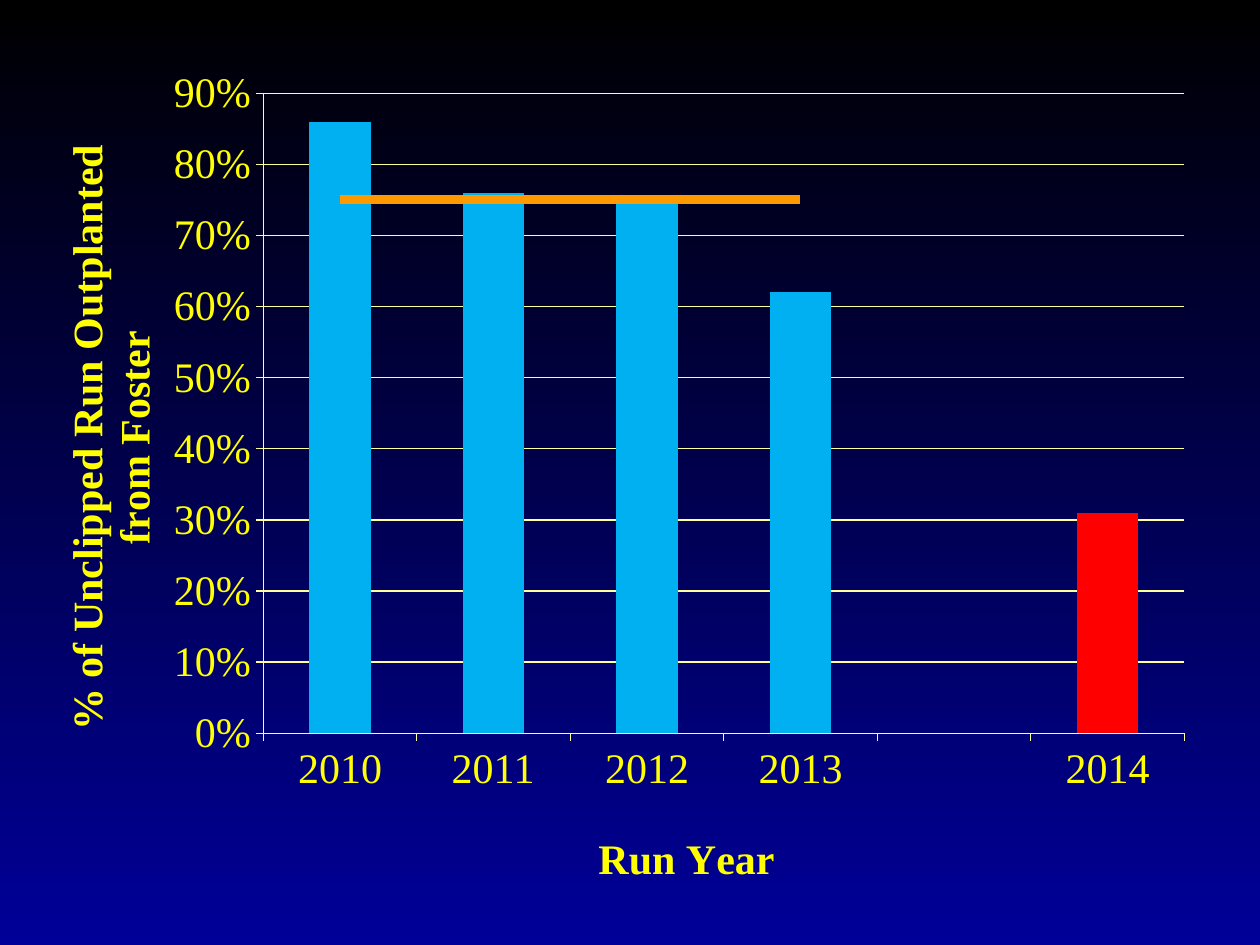
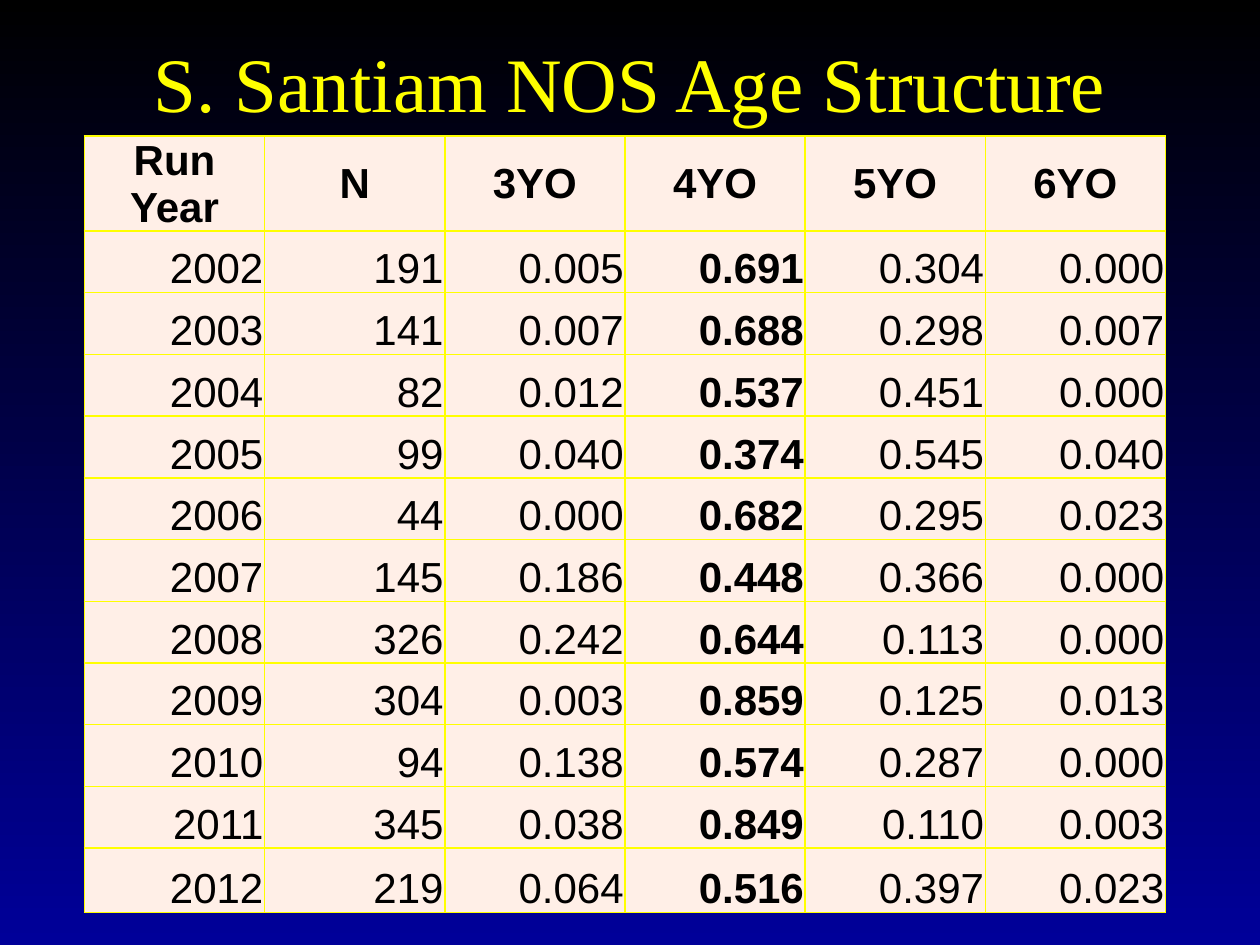
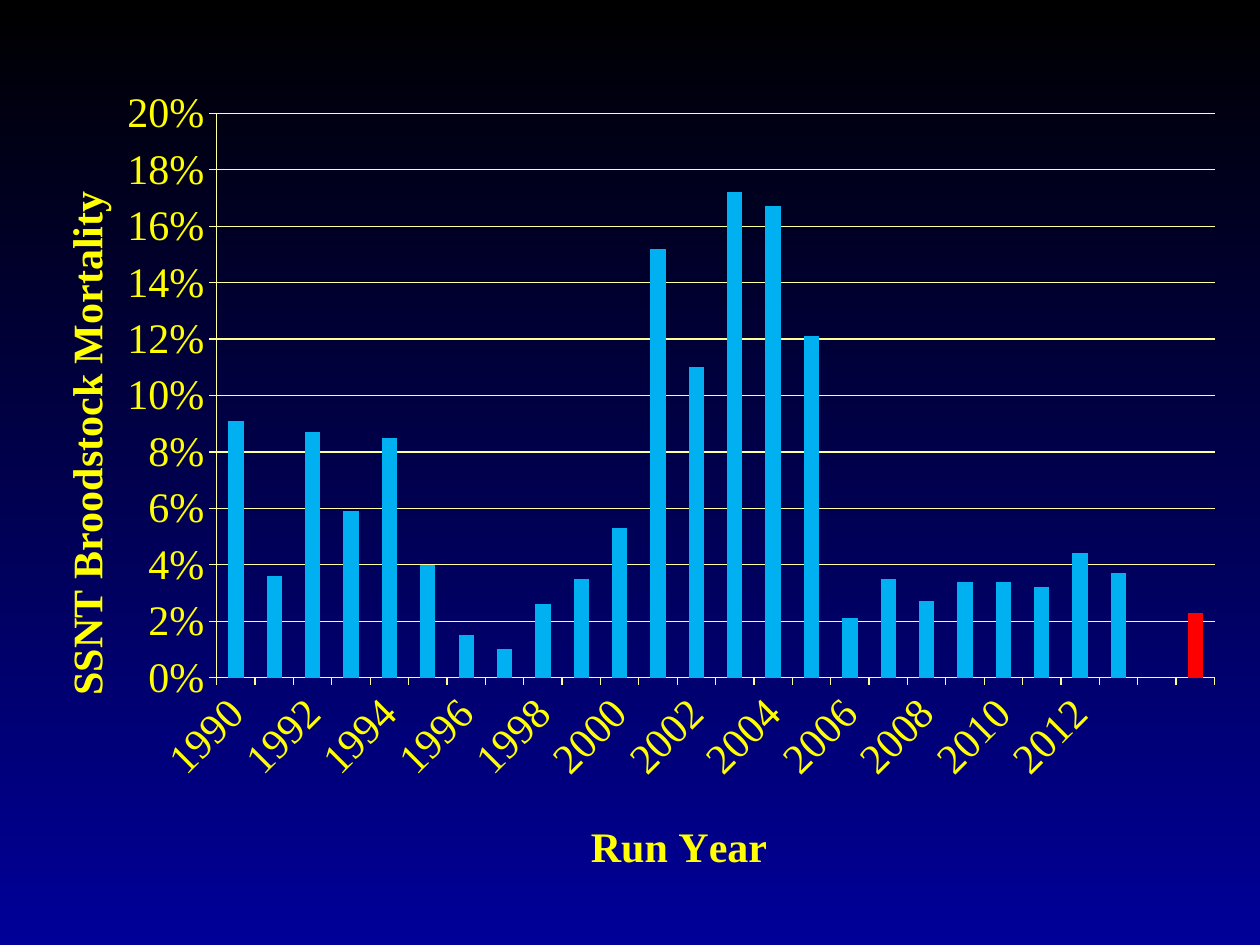
from dataclasses import dataclass
from typing import Any, Optional

from lxml.etree import SubElement
from pptx import Presentation
from pptx.chart.data import CategoryChartData
from pptx.dml.color import RGBColor
from pptx.enum.chart import XL_CHART_TYPE, XL_MARKER_STYLE, XL_TICK_MARK
from pptx.enum.text import MSO_ANCHOR, PP_ALIGN
from pptx.oxml import parse_xml
from pptx.oxml.ns import nsdecls, qn
from pptx.util import Inches, Pt

COLORS = {
    "top": "000000", "bottom": "000099", "text": "FFFF00", "grid": "FFFF99",
    "bar": "00B0F0", "current": "FF0000", "goal": "FF9900",
    "cell": "FFEFE7", "cell_text": "000000",
}
SERIF, SANS = "Times New Roman", "Arial"
Box = tuple[float, float, float, float]


@dataclass
class BarChart:
    """A percentage chart by run year; box, plot and titles in slide inches."""
    box: Box
    plot: Box
    cat_title_at: tuple[float, float]
    val_title: str
    val_title_at: tuple[float, float]
    years: list[str]
    rates: list[Optional[float]]
    top: float
    step: float
    goal: Optional[list[Optional[float]]] = None
    label_skip: int = 1
    label_turn: int = 0


OUTPLANTED = BarChart(
    box=(0.17, 0.42, 9.42, 6.75), plot=(2.09, 0.74, 7.31, 5.08),
    cat_title_at=(4.69, 6.54),
    val_title="% of Unclipped Run Outplanted from Foster", val_title_at=(0.41, 1.09),
    years=["2010", "2011", "2012", "2013", "", "2014"],
    rates=[0.86, 0.76, 0.75, 0.62, None, 0.31],
    top=0.9, step=0.1, goal=[0.75] * 4 + [None] * 2,
)
MORTALITY = BarChart(
    box=(0.17, 0.58, 9.67, 6.5), plot=(1.72, 0.9, 7.92, 4.48),
    cat_title_at=(4.63, 6.44),
    val_title="SSNT Broodstock Mortality", val_title_at=(0.41, 1.46),
    years=[str(year) for year in range(1990, 2014)] + ["", "2014"],
    rates=[0.091, 0.036, 0.087, 0.059, 0.085, 0.04, 0.015, 0.01, 0.026,
           0.035, 0.053, 0.152, 0.11, 0.172, 0.167, 0.121, 0.021, 0.035,
           0.027, 0.034, 0.034, 0.032, 0.044, 0.037, None, 0.023],
    top=0.2, step=0.02, label_skip=2, label_turn=-45,
)

AGE_HEAD = ["Run Year", "N", "3YO", "4YO", "5YO", "6YO"]
AGE_ROWS = [
    (2002, 191, 0.005, 0.691, 0.304, 0.000),
    (2003, 141, 0.007, 0.688, 0.298, 0.007),
    (2004, 82, 0.012, 0.537, 0.451, 0.000),
    (2005, 99, 0.040, 0.374, 0.545, 0.040),
    (2006, 44, 0.000, 0.682, 0.295, 0.023),
    (2007, 145, 0.186, 0.448, 0.366, 0.000),
    (2008, 326, 0.242, 0.644, 0.113, 0.000),
    (2009, 304, 0.003, 0.859, 0.125, 0.013),
    (2010, 94, 0.138, 0.574, 0.287, 0.000),
    (2011, 345, 0.038, 0.849, 0.110, 0.003),
    (2012, 219, 0.064, 0.516, 0.397, 0.023),
]
BOLD_COLUMN = AGE_HEAD.index("4YO")


def rgb(name: str) -> RGBColor:
    return RGBColor.from_string(COLORS[name])


def set_all(target: Any, values: dict[str, Any]) -> None:
    for name, value in values.items():
        setattr(target, name, value)


def style_font(font: Any, size: float, face: str, color: str, bold: bool = False) -> None:
    set_all(font, {"size": Pt(size), "name": face, "bold": bold})
    font.color.rgb = rgb(color)


def fill_solid(fill: Any, color: str) -> None:
    fill.solid()
    fill.fore_color.rgb = rgb(color)


def style_line(line: Any, color: str, width: float) -> None:
    line.color.rgb = rgb(color)
    line.width = Pt(width)


def paint_background(master: Any) -> None:
    fill = master.background.fill
    fill.gradient()
    fill.gradient_angle = 270
    for stop, color in zip(fill.gradient_stops, ("top", "bottom")):
        stop.color.rgb = rgb(color)


# Charts
def place(successor: Any, chart_box: Box, at: tuple[float, ...], inner: bool = False) -> None:
    """Put a manual layout just before the given chart element."""
    parent = successor.getparent()
    for old in parent.findall(qn("c:layout")):
        parent.remove(old)
    layout = parse_xml(f"<c:layout {nsdecls('c')}><c:manualLayout/></c:layout>")
    settings = {"layoutTarget": "inner"} if inner else {}
    settings |= {"xMode": "edge", "yMode": "edge"}
    x, y, w, h = chart_box
    fractions = [(at[0] - x) / w, (at[1] - y) / h]
    if inner:
        fractions += [at[2] / w, at[3] / h]
    settings |= {key: f"{value:.4f}" for key, value in zip("xywh", fractions)}
    for key, value in settings.items():
        SubElement(layout[0], qn(f"c:{key}")).set("val", value)
    successor.addprevious(layout)


def add_axis_title(axis: Any, text: str, chart_box: Box, at: tuple[float, float],
                   turn: int = 0) -> None:
    title = axis.axis_title
    tf = title.text_frame
    r = tf.paragraphs[0].add_run()
    r.text = text
    style_font(r.font, 24, SERIF, "text", bold=True)
    element = title._element
    element.find(".//" + qn("a:bodyPr")).set("rot", str(turn * 60000))
    place(element.find(qn("c:overlay")), chart_box, at)


def turn_into_line(chart: Any) -> None:
    """Move the second bar series to a line plot on the same axes."""
    bars = chart.plots[0]._element
    ser = bars.findall(qn("c:ser"))[1]
    for flag in ser.findall(qn("c:invertIfNegative")):
        ser.remove(flag)
    lines = parse_xml(f'<c:lineChart {nsdecls("c")}><c:grouping val="standard"/>'
                      '<c:varyColors val="0"/></c:lineChart>')
    lines.append(ser)
    SubElement(lines, qn("c:marker")).set("val", "1")
    for ax_id in bars.findall(qn("c:axId")):
        SubElement(lines, qn("c:axId")).set("val", ax_id.get("val"))
    bars.addnext(lines)
    goal = chart.plots[1].series[0]
    goal.smooth = False
    goal.marker.style = XL_MARKER_STYLE.NONE
    style_line(goal.format.line, "goal", 5)


def add_bar_chart(s: Any, spec: BarChart) -> None:
    data = CategoryChartData(number_format="0%")
    data.categories = spec.years
    data.add_series("Series 1", spec.rates)
    if spec.goal:
        data.add_series("Series 2", spec.goal)
    chart = s.shapes.add_chart(
        XL_CHART_TYPE.COLUMN_CLUSTERED, *map(Inches, spec.box), data).chart
    set_all(chart, {"has_legend": False, "has_title": False})
    style_font(chart.font, 24, SERIF, "text")

    # Bars, with the current year in its own colour
    plot = chart.plots[0]
    set_all(plot, {"gap_width": 150, "vary_by_categories": False})
    bars = plot.series[0]
    fill_solid(bars.format.fill, "bar")
    fill_solid(bars.points[len(spec.years) - 1].format.fill, "current")
    if spec.goal:
        turn_into_line(chart)

    # Axes
    cat, val = chart.category_axis, chart.value_axis
    for axis in (cat, val):
        axis.major_tick_mark = XL_TICK_MARK.OUTSIDE
        axis.minor_tick_mark = XL_TICK_MARK.NONE
        style_font(axis.tick_labels.font, 24, SERIF, "text")
        style_line(axis.format.line, "grid", 0.75)
    set_all(val, {"minimum_scale": 0, "maximum_scale": spec.top,
                  "major_unit": spec.step, "has_major_gridlines": True})
    set_all(val.tick_labels, {"number_format": "0%", "number_format_is_linked": False})
    style_line(val.major_gridlines.format.line, "grid", 0.75)
    if spec.label_turn:
        body = cat._element.find(qn("c:txPr")).find(qn("a:bodyPr"))
        body.set("rot", str(spec.label_turn * 60000))
    if spec.label_skip > 1:
        skip = parse_xml(f'<c:tickLblSkip {nsdecls("c")} val="{spec.label_skip}"/>')
        cat._element.find(qn("c:noMultiLvlLbl")).addprevious(skip)

    add_axis_title(cat, "Run Year", spec.box, spec.cat_title_at)
    add_axis_title(val, spec.val_title, spec.box, spec.val_title_at, turn=-90)
    place(plot._element, spec.box, spec.plot, inner=True)


# Table
def add_cell_borders(cell: Any) -> None:
    tc_pr = cell._tc.get_or_add_tcPr()
    for side in "LRTB":
        tc_pr.append(parse_xml(
            f'<a:ln{side} {nsdecls("a")} w="{Pt(1)}"><a:solidFill>'
            f'<a:srgbClr val="{COLORS["text"]}"/></a:solidFill></a:ln{side}>'))


def write_cell(cell: Any, text: str, header: bool, bold: bool) -> None:
    add_cell_borders(cell)
    fill_solid(cell.fill, "cell")
    edge = Inches(0.01)
    set_all(cell, {
        "margin_left": edge, "margin_top": edge, "margin_right": edge, "margin_bottom": 0,
        "vertical_anchor": MSO_ANCHOR.MIDDLE if header else MSO_ANCHOR.BOTTOM,
    })
    p = cell.text_frame.paragraphs[0]
    p.alignment = PP_ALIGN.CENTER if header else PP_ALIGN.RIGHT
    r = p.add_run()
    r.text = text
    style_font(r.font, 24, SANS, "cell_text", bold)


def add_age_table(s: Any) -> None:
    rows = [AGE_HEAD] + [
        [f"{v:.3f}" if isinstance(v, float) else str(v) for v in row] for row in AGE_ROWS]
    box = map(Inches, (0.67, 1.08, 8.58, 5.92))
    table = s.shapes.add_table(len(rows), len(AGE_HEAD), *box).table
    set_all(table, {"first_row": False, "horz_banding": False})
    for column in table.columns:
        column.width = Inches(1.43)
    for i, row in enumerate(rows):
        table.rows[i].height = Inches(0.51 if i in (0, len(rows) - 1) else 0.49)
        for j, text in enumerate(row):
            write_cell(table.cell(i, j), text, i == 0, i == 0 or j == BOLD_COLUMN)


def add_title(s: Any, text: str) -> None:
    tf = s.shapes.add_textbox(*map(Inches, (0.5, 0.17, 9, 1.25))).text_frame
    set_all(tf, {"word_wrap": True, "vertical_anchor": MSO_ANCHOR.TOP,
                 "margin_top": Inches(0.11)})
    p = tf.paragraphs[0]
    p.alignment = PP_ALIGN.CENTER
    r = p.add_run()
    r.text = text
    style_font(r.font, 44, SERIF, "text")


def main() -> None:
    prs = Presentation()
    set_all(prs, {"slide_width": Inches(10), "slide_height": Inches(7.5)})
    paint_background(prs.slide_master)
    outplanting, ages, mortality = (
        prs.slides.add_slide(prs.slide_layouts[6]) for _ in range(3))

    add_bar_chart(outplanting, OUTPLANTED)
    add_age_table(ages)
    add_title(ages, "S. Santiam NOS Age Structure")
    add_bar_chart(mortality, MORTALITY)
    prs.save("out.pptx")


if __name__ == "__main__":
    main()
